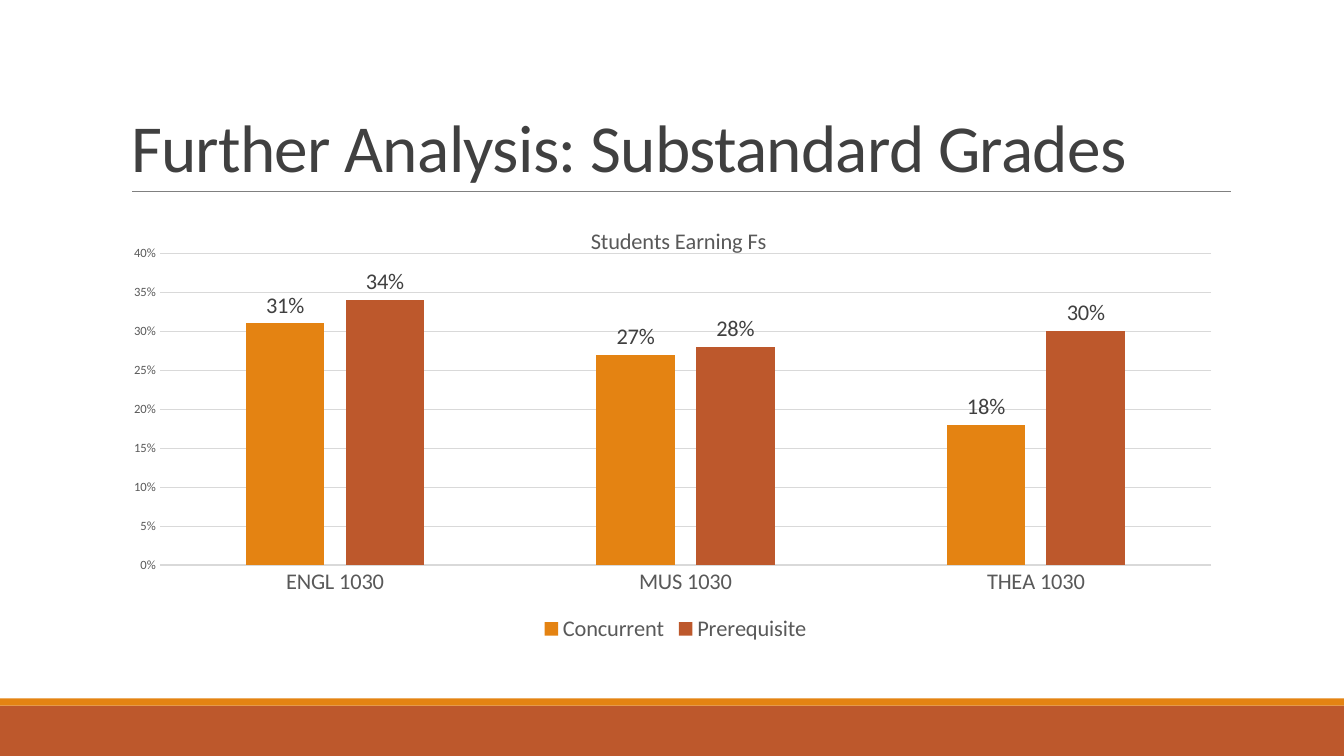
from lxml import etree
from pptx import Presentation
from pptx.chart.data import CategoryChartData
from pptx.dml.color import RGBColor
from pptx.enum.chart import XL_CHART_TYPE as CHART, XL_LABEL_POSITION as LABEL
from pptx.enum.chart import XL_LEGEND_POSITION as LEGEND, XL_TICK_MARK as TICK
from pptx.enum.shapes import MSO_CONNECTOR as CONNECTOR, MSO_SHAPE as SHAPE
from pptx.enum.text import MSO_ANCHOR as ANCHOR, PP_ALIGN as ALIGN
from pptx.oxml.ns import qn
from pptx.util import Inches, Pt

ORANGE = RGBColor(0xE4, 0x83, 0x12)
RUST = RGBColor(0xBD, 0x58, 0x2C)
DARK = RGBColor(0x40, 0x40, 0x40)
TEXT = RGBColor(0x59, 0x59, 0x59)
RULE = RGBColor(0x80, 0x80, 0x80)
GRID = RGBColor(0xD9, 0xD9, 0xD9)


class SlideBuilder:
    """Draws styled elements on one slide."""

    font_name = "Calibri"

    def __init__(self, slide):
        self.slide = slide

    def style(self, font, size, color):
        font.name = self.font_name
        font.size = Pt(size)
        font.color.rgb = color
        font.bold = False

    def band(self, top, height, color):
        sp = self.slide.shapes.add_shape(
            SHAPE.RECTANGLE, 0, Inches(top), Inches(13.33), Inches(height))
        sp.shadow.inherit = False
        sp.fill.solid()
        sp.fill.fore_color.rgb = color
        sp.line.fill.background()

    def rule(self, left, right, y):
        line = self.slide.shapes.add_connector(
            CONNECTOR.STRAIGHT, Inches(left), Inches(y), Inches(right), Inches(y))
        line.line.color.rgb = RULE
        line.line.width = Pt(0.5)
        etree.SubElement(line._element.spPr, qn("a:effectLst"))

    def title(self, text, left, top, width, height):
        sp = self.slide.shapes.title
        sp.left, sp.top = Inches(left), Inches(top)
        sp.width, sp.height = Inches(width), Inches(height)
        tf = sp.text_frame
        tf.text = text
        tf.word_wrap = True
        tf.vertical_anchor = ANCHOR.BOTTOM
        p = tf.paragraphs[0]
        p.alignment = ALIGN.LEFT
        p.line_spacing = 0.85
        self.style(p.font, 48, DARK)
        p.runs[0]._r.get_or_add_rPr().set("spc", "-50")

    def place(self, parent, index, **settings):
        for old in parent.findall(qn("c:layout")):
            parent.remove(old)
        layout = etree.Element(qn("c:layout"))
        manual = etree.SubElement(layout, qn("c:manualLayout"))
        for name, value in settings.items():
            etree.SubElement(manual, qn(f"c:{name}")).set("val", str(value))
        parent.insert(index, layout)

    def column_chart(self, title, categories, series, left, top, width, height):
        data = CategoryChartData(number_format="0%")
        data.categories = categories
        for name, values, _ in series:
            data.add_series(name, values)
        chart = self.slide.shapes.add_chart(
            CHART.COLUMN_CLUSTERED, Inches(left), Inches(top),
            Inches(width), Inches(height), data).chart
        self.style(chart.font, 10, TEXT)

        tf = chart.chart_title.text_frame
        tf.text = title
        self.style(tf.paragraphs[0].font, 16, TEXT)
        self.place(chart.chart_title._element, 1,
                   xMode="edge", yMode="edge", x=0.42, y=0.04)
        self.place(chart._chartSpace.chart.plotArea, 0, layoutTarget="inner",
                   xMode="edge", yMode="edge", x=0.035, y=0.112, w=0.948, h=0.703)

        chart.has_legend = True
        chart.legend.position = LEGEND.BOTTOM
        chart.legend.include_in_layout = False
        self.style(chart.legend.font, 16, TEXT)

        for axis, size in ((chart.category_axis, 16), (chart.value_axis, 9)):
            axis.major_tick_mark = axis.minor_tick_mark = TICK.NONE
            self.style(axis.tick_labels.font, size, TEXT)
        value_axis = chart.value_axis
        value_axis.minimum_scale, value_axis.maximum_scale = 0, 0.4
        value_axis.major_unit = 0.05
        value_axis.tick_labels.number_format = "0%"
        value_axis.tick_labels.number_format_is_linked = False
        value_axis.format.line.fill.background()
        for line in (chart.category_axis.format.line,
                     value_axis.major_gridlines.format.line):
            line.color.rgb = GRID
            line.width = Pt(0.75)

        plot = chart.plots[0]
        plot.vary_by_categories = False
        plot.gap_width, plot.overlap = 219, -27
        for columns, (_, _, color) in zip(plot.series, series):
            columns.format.fill.solid()
            columns.format.fill.fore_color.rgb = color
            labels = columns.data_labels
            labels.show_value = True
            labels.position = LABEL.OUTSIDE_END
            labels.number_format = "0%"
            labels.number_format_is_linked = False
            self.style(labels.font, 16, DARK)


def main():
    prs = Presentation()
    prs.slide_width, prs.slide_height = Inches(13.33), Inches(7.5)
    s = SlideBuilder(prs.slides.add_slide(prs.slide_layouts[5]))
    s.band(7, 0.5, RUST)
    s.band(6.93, 0.07, ORANGE)
    s.rule(1.31, 12.21, 1.9)
    s.title("Further Analysis: Substandard Grades", 1.2, 0.31, 11, 1.59)
    s.column_chart(
        "Students Earning Fs",
        ["ENGL 1030", "MUS 1030", "THEA 1030"],
        [("Concurrent", (0.31, 0.27, 0.18), ORANGE),
         ("Prerequisite", (0.34, 0.28, 0.3), RUST)],
        1.2, 2.02, 11, 4.4)
    prs.save("out.pptx")


if __name__ == "__main__":
    main()
